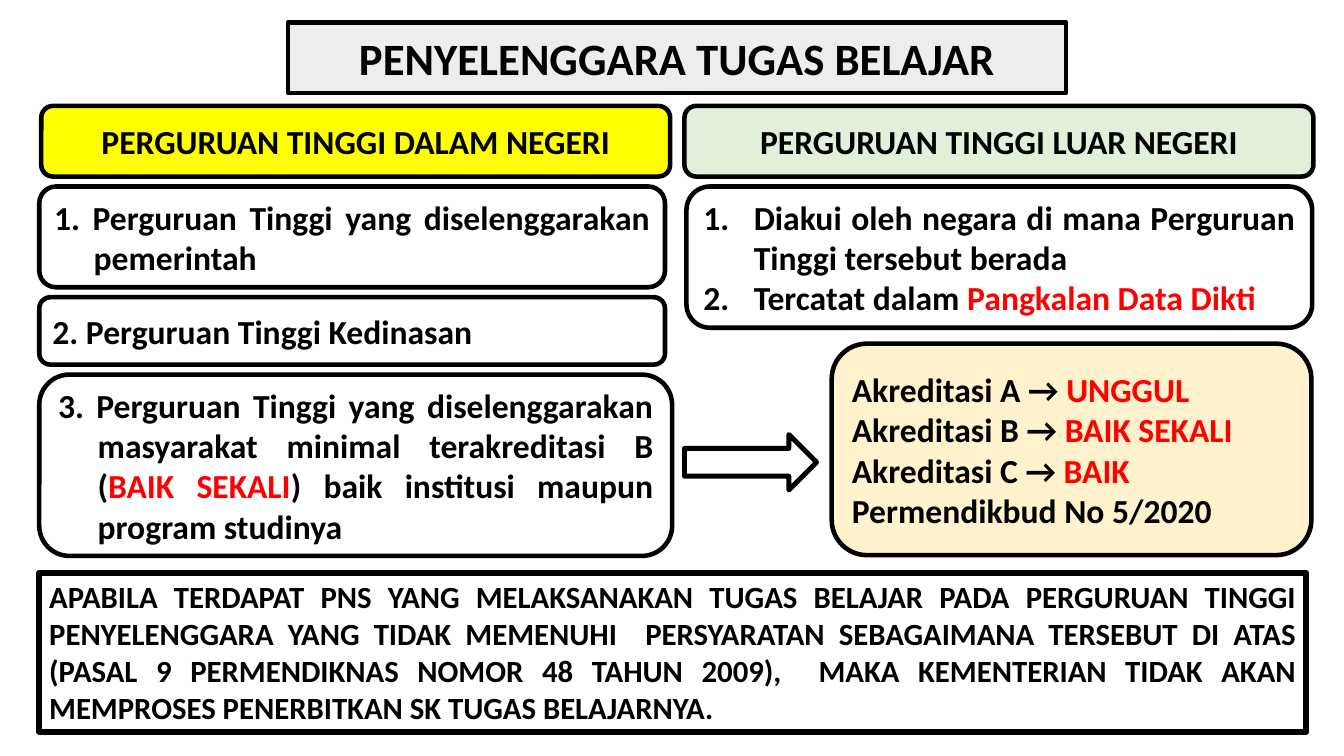
from lxml import etree
from pptx import Presentation
from pptx.dml.color import RGBColor
from pptx.enum import shapes, text
from pptx.oxml.ns import qn
from pptx.util import Cm, Pt

COLORS = {"ink": "000000", "accent": "FF0000", "title": "EDEDED",
          "domestic": "FFFF00", "foreign": "E2F0D9", "accreditation": "FFF2CC"}
ROUNDED = shapes.MSO_SHAPE.ROUNDED_RECTANGLE
LEFT, CENTER, JUSTIFY = (text.PP_ALIGN.LEFT, text.PP_ALIGN.CENTER,
                         text.PP_ALIGN.JUSTIFY)
HEADER_H, BODY_DROP, GAP = 1.78, 2.03, 0.25


def rgb(name):
    return RGBColor.from_string(COLORS[name])


def style_panel(panel, fill=None, line=3.25):
    panel.shadow.inherit = False
    if fill:
        panel.fill.solid()
        panel.fill.fore_color.rgb = rgb(fill)
    else:
        panel.fill.background()
    panel.line.color.rgb = rgb("ink")
    panel.line.width = Pt(line)


def write(panel, paragraphs, size=24, align=JUSTIFY, hang=0, numbered=False,
          anchor=text.MSO_ANCHOR.MIDDLE):
    """Each paragraph is a list of runs, alternating ink and accent colour."""
    frame = panel.text_frame
    frame.word_wrap = True
    frame.auto_size = text.MSO_AUTO_SIZE.NONE
    frame.vertical_anchor = anchor
    for number, runs in enumerate(paragraphs):
        para = frame.add_paragraph() if number else frame.paragraphs[0]
        para.alignment = align
        para.space_before = Pt(0)
        props = para._p.get_or_add_pPr()
        props.set("marL", str(Cm(hang)))
        props.set("indent", str(-Cm(hang)))
        if numbered:
            etree.SubElement(props, qn("a:buFont"), typeface="+mj-lt")
            etree.SubElement(props, qn("a:buAutoNum"), type="arabicPeriod")
        for position, words in enumerate(runs):
            run = para.add_run()
            run.text = words
            run.font.name = "Calibri"
            run.font.size = Pt(size)
            run.font.bold = True
            run.font.color.rgb = rgb("accent" if position % 2 else "ink")


def add_panel(slide, box, paragraphs=(), kind=ROUNDED, fill=None, line=3.25,
              **text_format):
    panel = slide.shapes.add_shape(kind, *map(Cm, box))
    style_panel(panel, fill, line)
    if paragraphs:
        write(panel, paragraphs, **text_format)
    return panel


def fill_placeholder(holder, box, paragraphs, fill=None, **text_format):
    holder.left, holder.top, holder.width, holder.height = map(Cm, box)
    outline = etree.SubElement(holder._element.spPr, qn("a:prstGeom"),
                               prst="roundRect")
    etree.SubElement(outline, qn("a:avLst"))
    style_panel(holder, fill)
    write(holder, paragraphs, **text_format)


# Left column: domestic universities
def domestic_column(slide, x, y, width):
    add_panel(slide, (x, y, width, HEADER_H),
              [["PERGURUAN TINGGI DALAM NEGERI"]],
              fill="domestic", align=CENTER)
    rules = [
        (15.77, 2.54, ["1. Perguruan Tinggi yang diselenggarakan pemerintah"],
         {"hang": 1}),
        (15.77, 1.7, ["2. Perguruan Tinggi Kedinasan"], {"align": LEFT}),
        (15.95, 4.57, ["3. Perguruan Tinggi yang diselenggarakan masyarakat "
                       "minimal terakreditasi B (", "BAIK SEKALI",
                       ") baik institusi maupun program studinya"],
         {"hang": 1}),
    ]
    top = y + BODY_DROP
    for rule_width, height, runs, text_format in rules:
        add_panel(slide, (x - 0.05, top, rule_width, height), [runs],
                  **text_format)
        top += height + GAP


# Right column: foreign universities
def foreign_column(slide, x, y, width):
    add_panel(slide, (x, y, width, HEADER_H),
              [["PERGURUAN TINGGI LUAR NEGERI"]],
              fill="foreign", align=CENTER)
    fill_placeholder(
        slide.placeholders[1], (x + 0.05, y + BODY_DROP, 15.77, 3.56),
        [["Diakui oleh negara di mana Perguruan Tinggi tersebut berada"],
         ["Tercatat dalam ", "Pangkalan Data Dikti"]],
        hang=1.27, numbered=True)


# Arrow and the accreditation scale it leads to
def accreditation_scale(slide, x, y, width, height):
    add_panel(slide, (x, y + 2.29, 3.33, 1.4),
              kind=shapes.MSO_SHAPE.RIGHT_ARROW, line=3.5)
    grades = [("A", "UNGGUL"), ("B", "BAIK SEKALI"), ("C", "BAIK")]
    lines = [[f"Akreditasi {grade} → ", label] for grade, label in grades]
    add_panel(slide, (x + 3.71, y, width - 3.71, height),
              lines + [["Permendikbud No 5/2020"]], fill="accreditation")


# Closing notice
def notice(slide, x, y, width, height):
    add_panel(slide, (x, y, width, height), [[
        "APABILA TERDAPAT PNS YANG MELAKSANAKAN TUGAS BELAJAR PADA PERGURUAN "
        "TINGGI PENYELENGGARA YANG TIDAK MEMENUHI  PERSYARATAN SEBAGAIMANA "
        "TERSEBUT DI ATAS (PASAL 9 PERMENDIKNAS NOMOR 48 TAHUN 2009),  MAKA "
        "KEMENTERIAN TIDAK AKAN MEMPROSES PENERBITKAN SK TUGAS BELAJARNYA."]],
        kind=shapes.MSO_SHAPE.RECTANGLE, line=4.25, size=22,
        anchor=text.MSO_ANCHOR.TOP)


def main():
    deck = Presentation()
    deck.slide_width, deck.slide_height = Cm(33.87), Cm(19.05)
    slide = deck.slides.add_slide(deck.slide_layouts[1])
    fill_placeholder(slide.shapes.title, (7.26, 0.56, 19.61, HEADER_H),
                     [["PENYELENGGARA TUGAS BELAJAR"]],
                     fill="title", size=32, align=CENTER)
    domestic_column(slide, 1.04, 2.67, 15.85)
    foreign_column(slide, 17.25, 2.67, 15.85)
    accreditation_scale(slide, 17.25, 8.66, 15.8, 5.33)
    notice(slide, 0.99, 14.43, 31.93, 4.01)
    deck.save("out.pptx")


if __name__ == "__main__":
    main()
